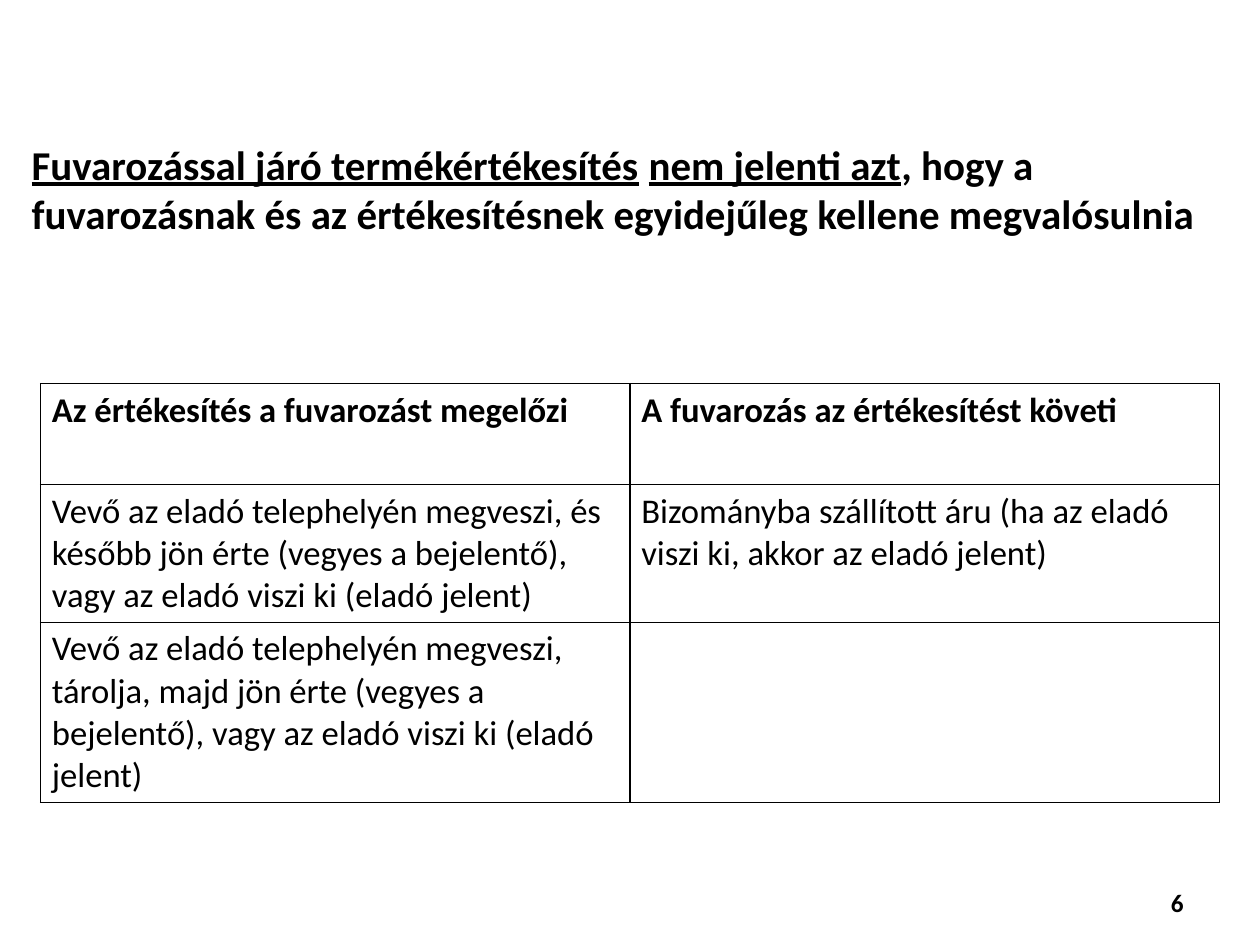
"""Build the slide on the timing of product sales that involve transport."""
from dataclasses import dataclass

from lxml import etree
from pptx import Presentation
from pptx.dml.color import RGBColor
from pptx.enum.text import MSO_ANCHOR, MSO_AUTO_SIZE, PP_ALIGN
from pptx.oxml.ns import qn
from pptx.util import Cm, Pt

LEFT, RIGHT = PP_ALIGN.LEFT, PP_ALIGN.RIGHT
TOP = MSO_ANCHOR.TOP
NO_AUTOFIT = MSO_AUTO_SIZE.NONE
TITLE_ONLY = 5

HEADING = [
    ("Fuvarozással járó termékértékesítés", True),
    (" ", False),
    ("nem jelenti azt", True),
    (", hogy a fuvarozásnak és az értékesítésnek egyidejűleg kellene megvalósulnia", False),
]
CASES = [
    ("Az értékesítés a fuvarozást megelőzi", "A fuvarozás az értékesítést követi"),
    (
        "Vevő az eladó telephelyén megveszi, és később jön érte (vegyes a bejelentő), "
        "vagy az eladó viszi ki (eladó jelent)",
        "Bizományba szállított áru (ha az eladó viszi ki, akkor az eladó jelent)",
    ),
    (
        "Vevő az eladó telephelyén megveszi, tárolja, majd jön érte (vegyes a bejelentő), "
        "vagy az eladó viszi ki (eladó jelent)",
        "",
    ),
]
PAGE_NUMBER = "6"


@dataclass(frozen=True)
class Theme:
    """Hold the colours, font and sizes of the slide."""

    font: str = "Calibri"
    ink: RGBColor = RGBColor(0, 0, 0)
    paper: RGBColor = RGBColor(255, 255, 255)
    heading: Pt = Pt(26)
    body: Pt = Pt(22)
    number: Pt = Pt(16)
    border: Pt = Pt(1)


THEME = Theme()


def add_run(paragraph, text, size, bold=False, underline=False):
    """Add one formatted run to a paragraph."""
    run = paragraph.add_run()
    run.text = text
    font = run.font
    font.name, font.size, font.bold, font.underline = THEME.font, size, bold, underline
    font.color.rgb = THEME.ink


def prepare_frame(frame, side_margin, alignment):
    """Set margins, wrapping and alignment, and return the first paragraph."""
    frame.auto_size = NO_AUTOFIT
    frame.word_wrap = True
    frame.vertical_anchor = TOP
    frame.margin_left = frame.margin_right = side_margin
    frame.margin_top = frame.margin_bottom = Cm(0.15)
    paragraph = frame.paragraphs[0]
    paragraph.alignment = alignment
    return paragraph


def add_heading(slide):
    """Fill the title placeholder with the partly underlined statement."""
    title = slide.shapes.title
    title.left, title.top, title.width, title.height = Cm(0.56), Cm(2.97), Cm(26.9), Cm(3)
    paragraph = prepare_frame(title.text_frame, Cm(0.15), LEFT)
    for text, underline in HEADING:
        add_run(paragraph, text, THEME.heading, True, underline)


def add_borders(cell):
    """Draw a thin line on all four sides of a cell."""
    properties = cell._tc.get_or_add_tcPr()
    for position, side in enumerate(("a:lnL", "a:lnR", "a:lnT", "a:lnB")):
        line = etree.Element(qn(side), w=str(THEME.border))
        fill = etree.SubElement(line, qn("a:solidFill"))
        etree.SubElement(fill, qn("a:srgbClr"), val=str(THEME.ink))
        properties.insert(position, line)


def add_cases(slide):
    """Add the table that compares the two orders of events."""
    row_height, column_width = Cm(2.26), Cm(13.2)
    columns = len(CASES[0])
    table = slide.shapes.add_table(
        len(CASES), columns, Cm(0.91), Cm(8.59), column_width * columns, row_height * len(CASES)
    ).table
    for row, texts in enumerate(CASES):
        for column, text in enumerate(texts):
            cell = table.cell(row, column)
            cell.fill.solid()
            cell.fill.fore_color.rgb = THEME.paper
            add_borders(cell)
            if text:
                add_run(cell.text_frame.paragraphs[0], text, THEME.body, row == 0)


def add_page_number(slide):
    """Add the page number at the lower right."""
    box = slide.shapes.add_textbox(Cm(23.44), Cm(19.71), Cm(3.35), Cm(1.47))
    paragraph = prepare_frame(box.text_frame, Cm(0.28), RIGHT)
    add_run(paragraph, PAGE_NUMBER, THEME.number, True)


def main():
    """Create and save the presentation."""
    presentation = Presentation()
    presentation.slide_width, presentation.slide_height = Cm(28.22), Cm(21.16)
    slide = presentation.slides.add_slide(presentation.slide_layouts[TITLE_ONLY])
    add_heading(slide)
    add_cases(slide)
    add_page_number(slide)
    presentation.save("out.pptx")


if __name__ == "__main__":
    main()
